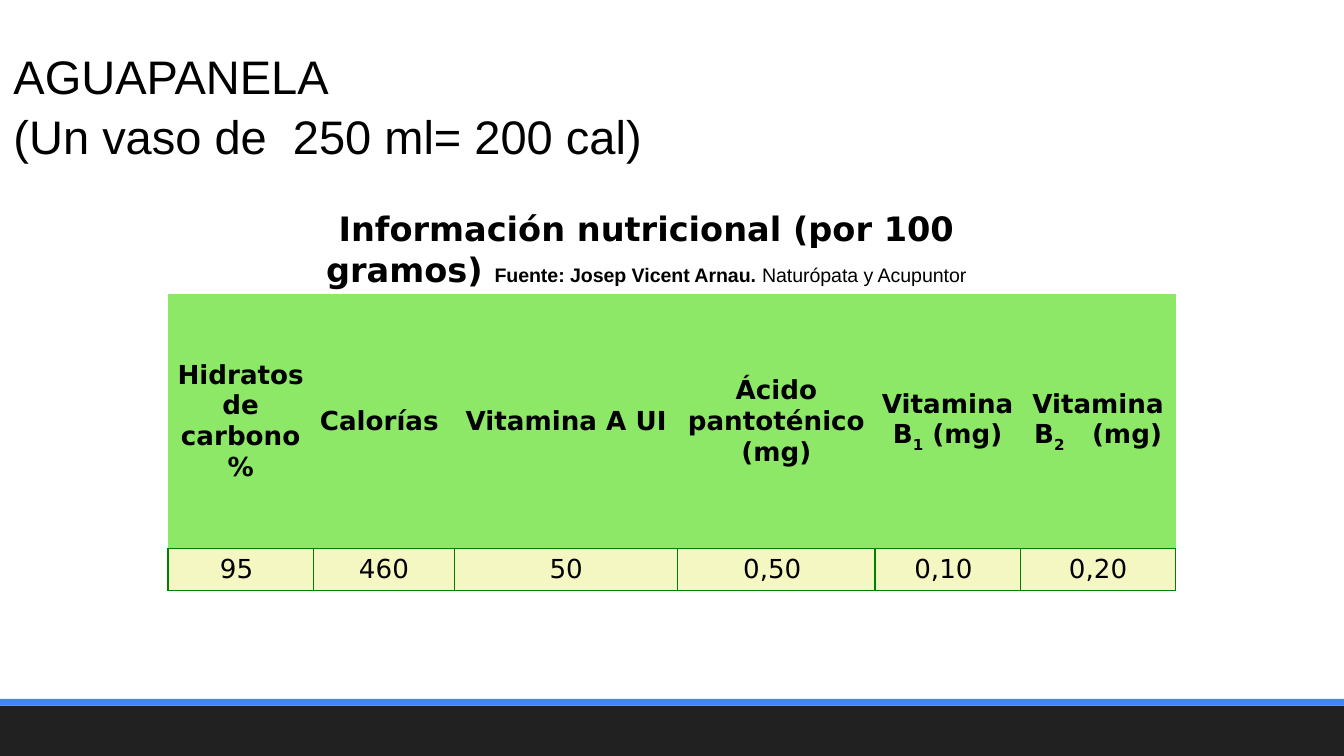
from typing import NamedTuple

from lxml.etree import SubElement
from pptx import Presentation
from pptx.dml.color import RGBColor
from pptx.enum.shapes import MSO_SHAPE as Kind
from pptx.enum.text import MSO_ANCHOR as Anchor, PP_ALIGN as Align
from pptx.oxml.ns import qn
from pptx.util import Pt

SANS = "DejaVu Sans"
GREEN, CREAM, EDGE = "8EE868", "F4F7C1", "008000"
PLAIN = "{2D5ABB26-0587-4C30-8999-92F81FD0307C}"


class Bar(NamedTuple):
    top: float
    high: float
    fill: str


class Column(NamedTuple):
    wide: float
    head: str
    value: str
    sub: str = ""
    tail: str = ""


class Piece(NamedTuple):
    text: str
    face: str
    size: float
    bold: bool


BARS = [Bar(378, 27, "212121"), Bar(374.4, 3.6, "4285F4")]
COLUMNS = [
    Column(77.9, "Hidratos de carbono %", "95 "),
    Column(75.6, "Calorías ", "460"),
    Column(119.7, "Vitamina A UI", "50"),
    Column(105.6, "Ácido pantoténico (mg)", "0,50 "),
    Column(77.9, "Vitamina B", "0,10 ", "1", " (mg)"),
    Column(83.3, "Vitamina B", "0,20", "2", "   (mg)"),
]
PIECES = [
    Piece("Información nutricional (por 100 gramos) ", SANS, 18, True),
    Piece("Fuente: Josep Vicent Arnau. ", "Arial", 10.5, True),
    Piece("Naturópata y Acupuntor  ", "Arial", 10.5, False),
]


def color(code: str) -> RGBColor:
    return RGBColor.from_string(code)


def style(font, face: str, size: float, bold: bool = False) -> None:
    font.name, font.size, font.bold = face, Pt(size), bold
    font.color.rgb = color("000000")


def draw_bar(slide, bar: Bar) -> None:
    shape = slide.shapes.add_shape(Kind.RECTANGLE, 0, Pt(bar.top), Pt(720), Pt(bar.high))
    shape.shadow.inherit = False
    shape.fill.solid()
    shape.fill.fore_color.rgb = color(bar.fill)
    shape.line.fill.background()


def draw_title(slide) -> None:
    title = slide.shapes.title
    title.left, title.top, title.width, title.height = 0, Pt(16.9), Pt(486), Pt(67.5)
    frame = title.text_frame
    frame.margin_left = frame.margin_right = Pt(7.2)
    frame.margin_top = frame.margin_bottom = Pt(7.2)
    frame.vertical_anchor, frame.word_wrap = Anchor.TOP, True
    para = frame.paragraphs[0]
    para.add_run().text = "AGUAPANELA"
    para.add_line_break()
    para.add_run().text = "(Un vaso de  250 ml= 200 cal)"
    para.alignment, para.line_spacing = Align.LEFT, 1.05
    style(para.font, "Arial", 25.2)


def draw_edge(cell, sides: str) -> None:
    props = cell._tc.get_or_add_tcPr()
    for side in sides:
        line = SubElement(props, qn(f"a:ln{side}"), w=str(Pt(0.75)))
        fill = SubElement(line, qn("a:solidFill"))
        SubElement(fill, qn("a:srgbClr"), val=EDGE)


def fill_cell(cell, parts: list[str], fill: str, bold: bool, sides: str) -> None:
    draw_edge(cell, sides)
    cell.fill.solid()
    cell.fill.fore_color.rgb = color(fill)
    cell.margin_left = cell.margin_right = cell.margin_top = cell.margin_bottom = 0
    cell.vertical_anchor = Anchor.MIDDLE
    para = cell.text_frame.paragraphs[0]
    para.alignment = Align.CENTER
    style(para.font, SANS, 14, bold)
    for spot, part in enumerate(parts):
        if part:
            run = para.add_run()
            run.text = part
            style(run.font, SANS, 14, bold)
            if spot == 1:
                run.font._element.set("baseline", "-25000")


def draw_table(slide) -> None:
    frame = slide.shapes.add_table(2, len(COLUMNS), Pt(90), Pt(157.5), Pt(540), Pt(159))
    table = frame.table
    table.first_row = table.horz_banding = False
    table._tbl.tblPr.find(qn("a:tableStyleId")).text = PLAIN
    table.rows[0].height, table.rows[1].height = Pt(136.4), Pt(22.6)
    for spot, col in enumerate(COLUMNS):
        table.columns[spot].width = Pt(col.wide)
        fill_cell(table.cell(0, spot), [col.head, col.sub, col.tail], GREEN, True, "B")
        fill_cell(table.cell(1, spot), [col.value], CREAM, False, "LRTB")


def draw_label(slide) -> None:
    box = slide.shapes.add_textbox(Pt(166.3), Pt(108), Pt(360), Pt(85.7))
    box.text_frame.word_wrap = True
    para = box.text_frame.paragraphs[0]
    para.alignment = Align.CENTER
    for piece in PIECES:
        run = para.add_run()
        run.text = piece.text
        style(run.font, piece.face, piece.size, piece.bold)


def main() -> None:
    deck = Presentation()
    deck.slide_width, deck.slide_height = Pt(720), Pt(405)
    slide = deck.slides.add_slide(deck.slide_layouts[5])
    for bar in BARS:
        draw_bar(slide, bar)
    draw_table(slide)
    draw_title(slide)
    draw_label(slide)
    deck.save("out.pptx")


if __name__ == "__main__":
    main()
